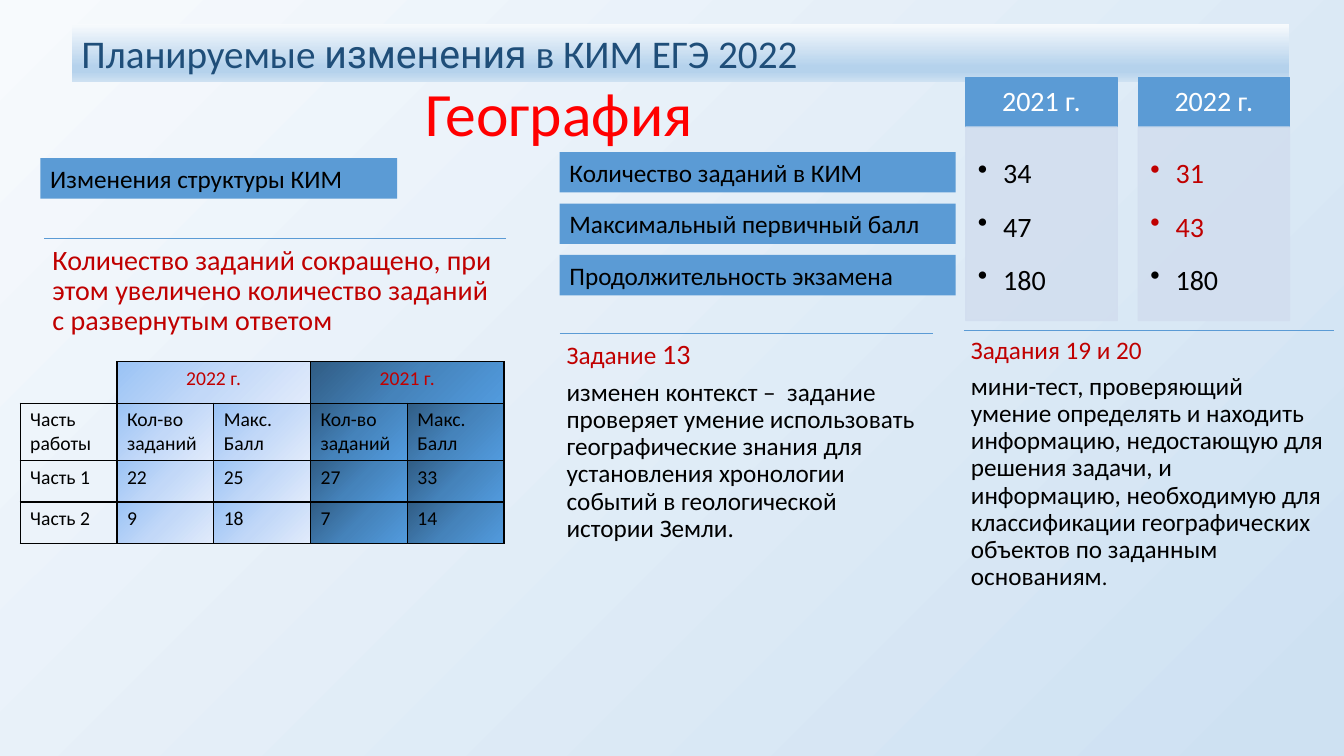
from lxml.etree import SubElement
from pptx import Presentation
from pptx.dml.color import RGBColor
from pptx.enum.shapes import MSO_CONNECTOR, MSO_SHAPE
from pptx.enum.text import MSO_ANCHOR as Anchor, PP_ALIGN as Align
from pptx.oxml.ns import qn
from pptx.util import Pt

EMU_PER_PX = 9144  # 100 px to the inch

BLACK = RGBColor(0, 0, 0)
WHITE = RGBColor(0xFF, 0xFF, 0xFF)
RED = RGBColor(0xFF, 0, 0)
DARK_RED = RGBColor(0xC0, 0, 0)
NAVY = RGBColor(0x1F, 0x4E, 0x79)
BLUE = RGBColor(0x5B, 0x9B, 0xD5)
PANEL = RGBColor(0xD2, 0xDE, 0xEF)
PALE = RGBColor(0xF7, 0xFA, 0xFD)
MIST = RGBColor(0xCE, 0xE1, 0xF2)
SKY = RGBColor(0xB5, 0xD2, 0xEC)

PAGE_GRADIENT = [(0, PALE), (97, MIST)]
BANNER_GRADIENT = [(0, PALE), (74, SKY), (83, SKY), (100, MIST)]
LIGHT_GRADIENT = [(0, RGBColor(0x9A, 0xC3, 0xF5)), (50, RGBColor(0xC2, 0xD8, 0xF8)),
                  (100, RGBColor(0xE1, 0xEB, 0xFB))]
DARK_GRADIENT = [(0, RGBColor(0x30, 0x5C, 0x84)), (50, RGBColor(0x45, 0x83, 0xBB)),
                 (100, RGBColor(0x52, 0x9B, 0xDE))]

TABLE_ROWS = [
    ["", "2022 г.", "", "2021 г.", ""],
    ["Часть работы", "Кол-во заданий", "Макс. Балл", "Кол-во заданий", "Макс. Балл"],
    ["Часть 1", "22", "25", "27", "33"],
    ["Часть 2", "9", "18", "7", "14"],
]


def px(length):
    return length * EMU_PER_PX


def set_gradient(fill, owner, stops, angle):
    """Fill with (percent, colour) stops; owner is the XML element holding the fill."""
    fill.gradient()
    gradient = next(owner.iter(qn("a:gradFill")))
    stop_list = gradient.find(qn("a:gsLst"))
    for stop in list(stop_list):
        stop_list.remove(stop)
    for percent, color in stops:
        stop = SubElement(stop_list, qn("a:gs"), pos=str(percent * 1000))
        SubElement(stop, qn("a:srgbClr"), val=str(color))
    gradient.find(qn("a:lin")).set("ang", str(angle * 60000))


def set_borders(cell, visible_sides):
    """Draw black borders on the visible sides (letters of LRTB), none on the others."""
    properties = cell._tc.get_or_add_tcPr()
    for side in "LRTB":
        line = SubElement(properties, qn("a:ln" + side), w=str(Pt(1)))
        if side in visible_sides:
            fill = SubElement(line, qn("a:solidFill"))
            SubElement(fill, qn("a:srgbClr"), val=str(BLACK))
        else:
            SubElement(line, qn("a:noFill"))


class SlideBuilder:
    font_name = "Calibri"

    def __init__(self, presentation):
        self.slide = presentation.slides.add_slide(presentation.slide_layouts[6])
        set_gradient(self.slide.background.fill, self.slide.element, PAGE_GRADIENT, 45)

    def frame(self, shape, margins=(10, 5, 10, 5), anchor=Anchor.TOP):
        """Prepare the text frame; margins are left, top, right, bottom."""
        frame = shape.text_frame
        frame.word_wrap = True
        frame.vertical_anchor = anchor
        (frame.margin_left, frame.margin_top,
         frame.margin_right, frame.margin_bottom) = map(px, margins)
        return frame

    def paragraph(self, frame, text, size, color, align=Align.LEFT, spacing=1.0, after=0):
        """Fill the first paragraph if it is empty, otherwise add one."""
        paragraph = frame.paragraphs[0]
        if paragraph.runs:
            paragraph = frame.add_paragraph()
        paragraph.add_run().text = text
        paragraph.alignment = align
        paragraph.line_spacing = spacing
        paragraph.space_after = Pt(after)
        paragraph.font.name = self.font_name
        paragraph.font.size = Pt(size)
        paragraph.font.color.rgb = color
        return paragraph

    def run(self, paragraph, text, size=None, font_name=None):
        run = paragraph.add_run()
        run.text = text
        if size:
            run.font.size = Pt(size)
        if font_name:
            run.font.name = font_name

    def rectangle(self, box, color=BLUE):
        shape = self.slide.shapes.add_shape(MSO_SHAPE.RECTANGLE, *map(px, box))
        shape.shadow.inherit = False
        shape.fill.solid()
        shape.fill.fore_color.rgb = color
        shape.line.fill.background()
        return shape

    def title(self, box, text):
        text_box = self.slide.shapes.add_textbox(*map(px, box))
        frame = self.frame(text_box, anchor=Anchor.MIDDLE)
        self.paragraph(frame, text, 44, RED, spacing=0.9)

    def banner(self, box, before, emphasis, after):
        shape = self.rectangle(box)
        set_gradient(shape.fill, shape.element, BANNER_GRADIENT, 90)
        paragraph = self.paragraph(self.frame(shape), before, 28, NAVY)
        self.run(paragraph, emphasis, font_name="Roboto")
        self.run(paragraph, after)

    def label(self, box, text):
        self.paragraph(self.frame(self.rectangle(box)), text, 18, BLACK)

    def year_column(self, left, year, values):
        """Draw a heading over a translucent panel with (text, colour) bullets."""
        heading = self.rectangle((left, 77, 150, 49))
        heading.line.color.rgb = BLUE
        heading.line.width = Pt(1)
        frame = self.frame(heading, (16, 9, 16, 9), Anchor.MIDDLE)
        self.paragraph(frame, year, 20, WHITE, Align.CENTER, 0.9)

        panel = self.rectangle((left, 126, 150, 192), PANEL)
        panel.line.color.rgb = PANEL
        panel.line.width = Pt(1)
        for color in panel.element.spPr.iter(qn("a:srgbClr")):
            SubElement(color, qn("a:alpha"), val="90000")
        frame = self.frame(panel, (12, 12, 16, 17))
        for text, color in values:
            paragraph = self.paragraph(frame, text, 20, color, spacing=1.5, after=2)
            properties = paragraph._p.get_or_add_pPr()
            properties.set("marL", str(px(25)))
            properties.set("indent", str(px(-25)))
            bullet = SubElement(properties, qn("a:buChar"), char="•")
            properties.find(qn("a:defRPr")).addprevious(bullet)

    def section(self, box, margin):
        """Draw a rule with a text area below it and return the text frame."""
        left, top, width, _ = box
        rule = self.slide.shapes.add_connector(
            MSO_CONNECTOR.STRAIGHT, px(left), px(top), px(left + width), px(top))
        rule.line.color.rgb = BLUE
        rule.line.width = Pt(0.5)
        SubElement(rule.element.spPr, qn("a:effectLst"))
        return self.frame(self.slide.shapes.add_textbox(*map(px, box)), (margin,) * 4)

    def table(self, left, top, column_width, row_heights, rows):
        column_count = len(rows[0])
        table = self.slide.shapes.add_table(
            len(rows), column_count, px(left), px(top),
            px(column_width * column_count), px(sum(row_heights))).table
        table.first_row = table.horz_banding = False
        for row, height in zip(table.rows, row_heights):
            row.height = px(height)
        for column in (1, 3):
            table.cell(0, column).merge(table.cell(0, column + 1))
        for row, texts in enumerate(rows):
            for column, text in enumerate(texts):
                cell = table.cell(row, column)
                set_borders(cell, "LRTB" if row or column else "RB")
                if column == 0:
                    cell.fill.background()
                else:
                    stops = LIGHT_GRADIENT if column < 3 else DARK_GRADIENT
                    set_gradient(cell.fill, cell._tc, stops, 45)
                if text:
                    self.paragraph(cell.text_frame, text, 14, BLACK if row else DARK_RED,
                                   Align.LEFT if row else Align.CENTER)


def main():
    presentation = Presentation()
    presentation.slide_width, presentation.slide_height = px(1333), px(750)
    builder = SlideBuilder(presentation)

    builder.title((412, 76, 313, 79), "География")
    builder.banner((71, 24, 1208, 57), "Планируемые ", "изменения", " в КИМ ЕГЭ 2022")
    labels = ["Количество заданий в КИМ", "Максимальный первичный балл",
              "Продолжительность экзамена"]
    for index, text in enumerate(labels):
        builder.label((555, 151 + 51 * index, 393, 40), text)
    builder.label((40, 157, 354, 40), "Изменения структуры КИМ")

    builder.year_column(958, "2021 г.", [("34", BLACK), ("47", BLACK), ("180", BLACK)])
    builder.year_column(1129, "2022 г.", [("31", DARK_RED), ("43", DARK_RED), ("180", BLACK)])

    frame = builder.section((555, 331, 370, 375), 7)
    heading = builder.paragraph(frame, "Задание ", 18, DARK_RED, spacing=0.9, after=6)
    builder.run(heading, "13", size=20)
    builder.paragraph(
        frame, "изменен контекст –  задание проверяет умение использовать географические "
        "знания для установления хронологии событий в геологической истории Земли.",
        18, BLACK, spacing=0.9)

    frame = builder.section((956, 328, 367, 372), 7)
    builder.paragraph(frame, "Задания 19 и 20", 18, DARK_RED, spacing=0.9, after=6)
    body = builder.paragraph(
        frame, "мини-тест, проверяющий умение определять и находить информацию, недостающую "
        "для решения задачи, и информацию, необходимую для классификации географических "
        "объектов по заданным основаниям", 18, BLACK, spacing=0.9)
    builder.run(body, ".", size=16)

    frame = builder.section((44, 236, 458, 97), 8)
    builder.paragraph(
        frame, "Количество заданий сокращено, при этом увеличено количество заданий "
        "с развернутым ответом", 20, DARK_RED, spacing=0.9)

    builder.table(20, 359, 96, [41, 57, 41, 41], TABLE_ROWS)
    presentation.save("out.pptx")


if __name__ == "__main__":
    main()
